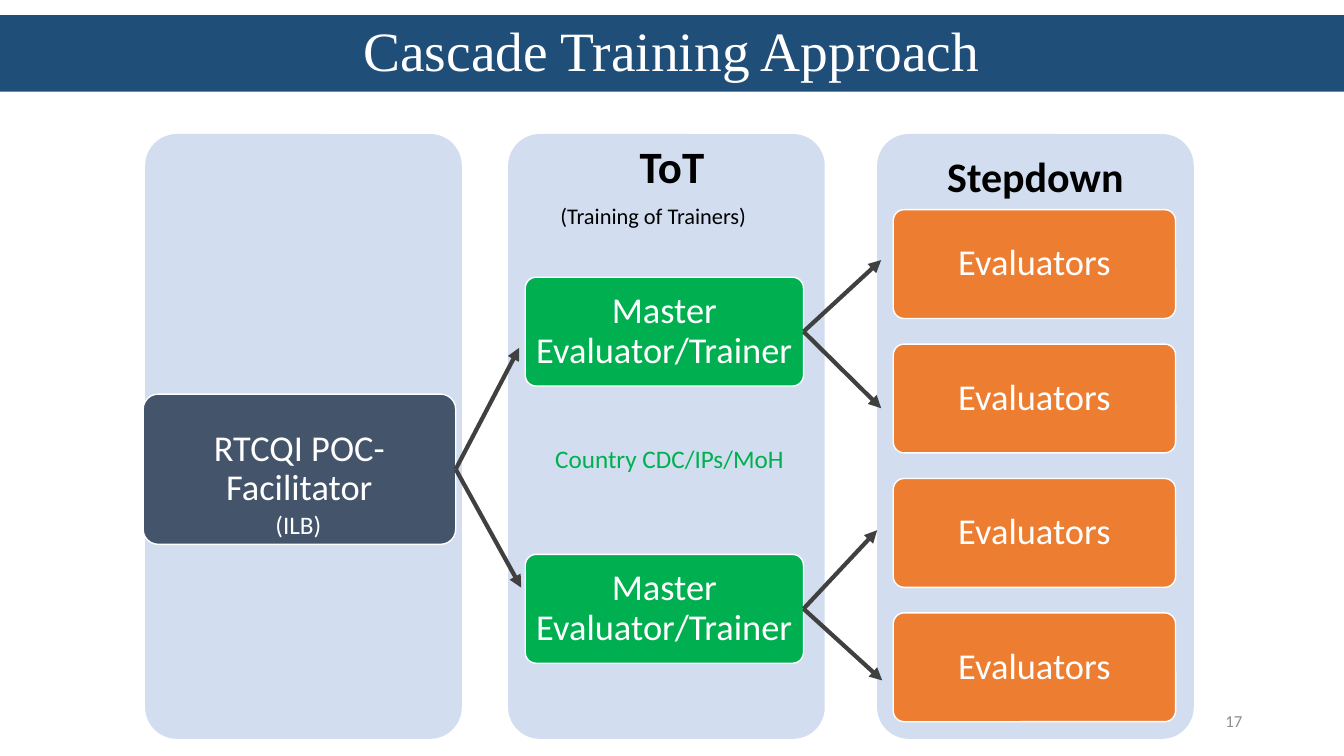
from lxml import etree
from pptx import Presentation
from pptx.dml.color import RGBColor
from pptx.enum.shapes import MSO_CONNECTOR, MSO_SHAPE
from pptx.enum.text import MSO_ANCHOR, PP_ALIGN
from pptx.oxml.ns import qn
from pptx.util import Inches, Pt

STRAIGHT = MSO_CONNECTOR.STRAIGHT
ROUNDED = MSO_SHAPE.ROUNDED_RECTANGLE
TOP, MIDDLE = MSO_ANCHOR.TOP, MSO_ANCHOR.MIDDLE
CENTER, RIGHT = PP_ALIGN.CENTER, PP_ALIGN.RIGHT
RIGHT_SIDE = 3

NAVY = RGBColor(0x1F, 0x4E, 0x79)
PALE_BLUE = RGBColor(0xD2, 0xDE, 0xEF)
SLATE = RGBColor(0x44, 0x54, 0x6A)
GREEN = RGBColor(0x00, 0xB0, 0x50)
ORANGE = RGBColor(0xED, 0x7D, 0x31)
DARK_GRAY = RGBColor(0x40, 0x40, 0x40)
GRAY = RGBColor(0x8C, 0x8C, 0x8C)
BLACK = RGBColor(0x00, 0x00, 0x00)
WHITE = RGBColor(0xFF, 0xFF, 0xFF)


def write(shape, text, size, color, bold=False, align=CENTER, font="Calibri"):
    """Put one formatted paragraph in a shape and return it."""
    para = shape.text_frame.paragraphs[0]
    para.text = text
    para.alignment = align
    para.font.name = font
    para.font.size = Pt(size)
    para.font.bold = bold
    para.font.color.rgb = color
    return para


def add_title(page, text):
    title = page.shapes.title
    title.left, title.top = Inches(-0.01), Inches(0.15)
    title.width, title.height = Inches(13.34), Inches(0.76)
    title.fill.solid()
    title.fill.fore_color.rgb = NAVY
    title.text_frame.vertical_anchor = MIDDLE
    write(title, text, 39.6, WHITE, font="Times New Roman").line_spacing = 0.9


def add_rounded(page, left, top, width, height, fill):
    box = page.shapes.add_shape(ROUNDED, Inches(left), Inches(top),
                                Inches(width), Inches(height))
    box.adjustments[0] = 0.1
    box.shadow.inherit = False
    box.fill.solid()
    box.fill.fore_color.rgb = fill
    box.line.fill.background()
    return box


def add_role(page, left, top, width, height, fill, text):
    box = add_rounded(page, left, top, width, height, fill)
    box.line.color.rgb = WHITE
    box.line.width = Pt(1)
    frame = box.text_frame
    frame.word_wrap = True
    frame.vertical_anchor = MIDDLE
    frame.margin_left = frame.margin_right = Inches(0.04)
    frame.margin_top = frame.margin_bottom = Inches(0.04)
    write(box, text, 26, WHITE).line_spacing = 0.9
    return box


def add_label(page, left, top, width, height, text, size, color,
              bold=False, align=CENTER, anchor=TOP):
    label = page.shapes.add_textbox(Inches(left), Inches(top),
                                    Inches(width), Inches(height))
    label.text_frame.word_wrap = True
    label.text_frame.vertical_anchor = anchor
    write(label, text, size, color, bold, align)


def add_arrow(page, source, end_x, end_y):
    """Draw an arrow from the right side of a box to a point."""
    arrow = page.shapes.add_connector(STRAIGHT, 0, 0, Inches(end_x), Inches(end_y))
    arrow.begin_connect(source, RIGHT_SIDE)
    arrow.line.color.rgb = DARK_GRAY
    arrow.line.width = Pt(3)
    etree.SubElement(arrow.line._get_or_add_ln(), qn("a:tailEnd"), type="triangle")
    etree.SubElement(arrow._element.spPr, qn("a:effectLst"))


def main():
    deck = Presentation()
    deck.slide_width, deck.slide_height = Inches(13.33), Inches(7.5)
    page = deck.slides.add_slide(deck.slide_layouts[5])
    add_title(page, "Cascade Training Approach")

    # Column panels
    for left in (1.44, 5.04, 8.7):
        panel = add_rounded(page, left, 1.33, 3.14, 6, PALE_BLUE)
    stepdown = panel.text_frame
    stepdown.vertical_anchor = TOP
    stepdown.margin_top = Inches(0.13)
    write(panel, "Stepdown", 30, BLACK, bold=True).line_spacing = 0.9

    # Roles
    facilitator = add_role(page, 1.42, 3.91, 3.1, 1.49, SLATE, "RTCQI POC-Facilitator")
    trainers = [add_role(page, 5.21, top, 2.76, 1.08, GREEN, "Master Evaluator/Trainer")
                for top in (2.75, 5.5)]
    for row in range(4):
        add_role(page, 8.86, 2.08 + row * 4 / 3, 2.8, 1.08, ORANGE, "Evaluators")

    # Arrows
    for source, end_x, end_y in (
        (trainers[0], 8.74, 2.58),
        (trainers[0], 8.74, 4.05),
        (trainers[1], 8.7, 5.26),
        (trainers[1], 8.75, 6.75),
        (facilitator, 5.15, 3.45),
        (facilitator, 5.17, 5.83),
    ):
        add_arrow(page, source, end_x, end_y)

    # Labels and page number
    add_label(page, 5.58, 1.33, 2.17, 0.64, "ToT", 32, BLACK, bold=True)
    add_label(page, 2.53, 5, 0.86, 0.4, "(ILB)", 18, WHITE)
    add_label(page, 5.1, 1.96, 2.76, 0.37, "(Training of Trainers)", 16, BLACK)
    add_label(page, 5.22, 4.35, 2.84, 0.4, "Country CDC/IPs/MoH", 18, GREEN)
    add_label(page, 9.42, 6.95, 3, 0.4, "17", 12, GRAY, align=RIGHT, anchor=MIDDLE)

    deck.save("out.pptx")


if __name__ == "__main__":
    main()
